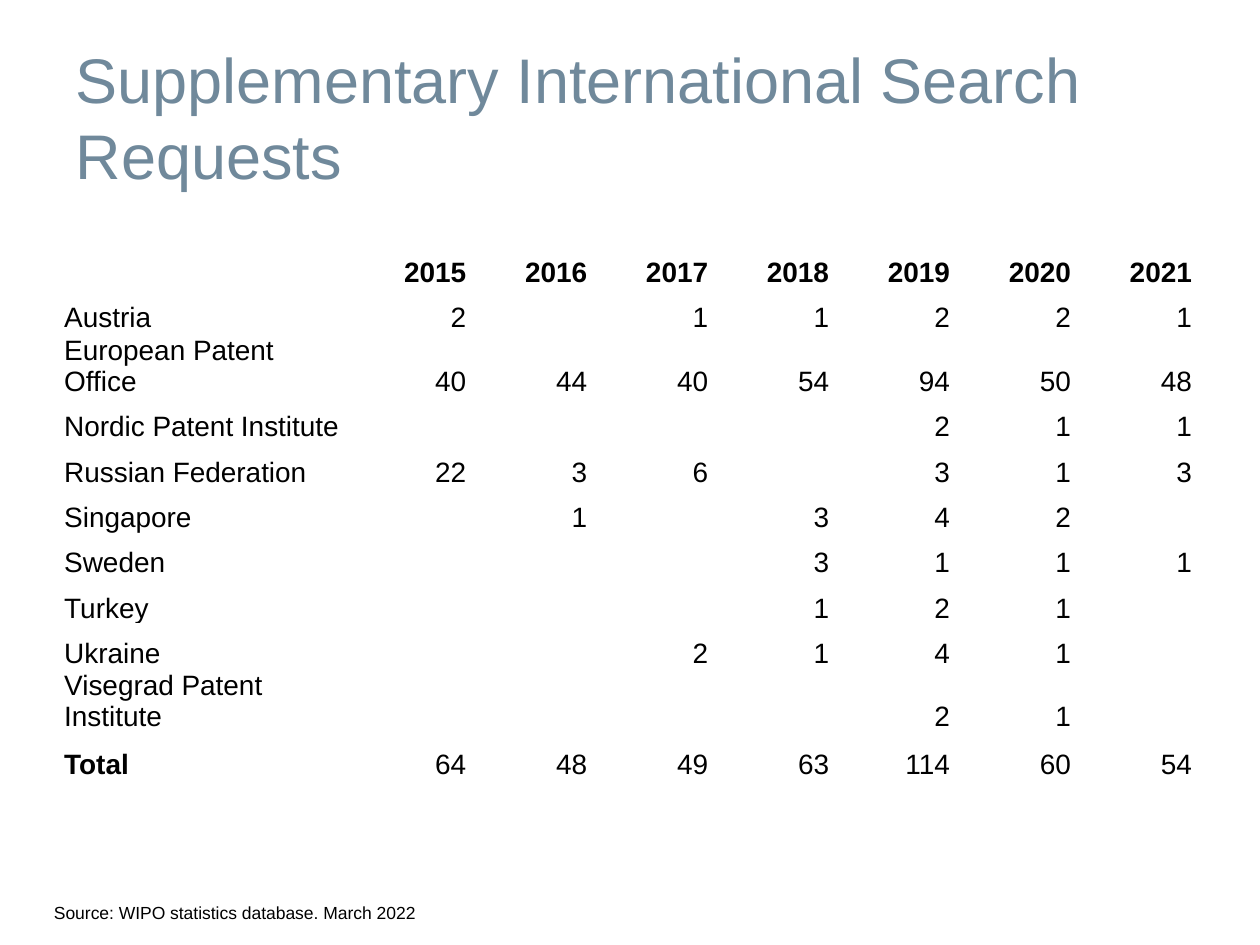
from lxml.etree import SubElement
from pptx import Presentation
from pptx.dml.color import RGBColor
from pptx.enum.text import MSO_ANCHOR, PP_ALIGN
from pptx.oxml.ns import qn
from pptx.util import Inches, Pt

COLORS = {"title": "70899B", "text": "000000"}
FONT = "Arial"
TITLE = "Supplementary International Search Requests"
SOURCE = "Source: WIPO statistics database. March 2022"
REQUESTS = [
    ("", 2015, 2016, 2017, 2018, 2019, 2020, 2021),
    ("Austria", 2, "", 1, 1, 2, 2, 1),
    ("European Patent Office", 40, 44, 40, 54, 94, 50, 48),
    ("Nordic Patent Institute", "", "", "", "", 2, 1, 1),
    ("Russian Federation", 22, 3, 6, "", 3, 1, 3),
    ("Singapore", "", 1, "", 3, 4, 2, ""),
    ("Sweden", "", "", "", 3, 1, 1, 1),
    ("Turkey", "", "", "", 1, 2, 1, ""),
    ("Ukraine", "", "", 2, 1, 4, 1, ""),
    ("Visegrad Patent Institute", "", "", "", "", 2, 1, ""),
    ("Total", 64, 48, 49, 63, 114, 60, 54),
]
LABEL_WIDTH, YEAR_WIDTH = 2.25, 0.96
HEADER_HEIGHT, ROW_HEIGHT, TOTAL_HEIGHT = 0.29, 0.36, 0.38


def write(frame, text, size, color="text", bold=False, align=PP_ALIGN.LEFT, anchor=MSO_ANCHOR.TOP):
    """Put one formatted paragraph into a text frame."""
    frame.word_wrap = True
    frame.vertical_anchor = anchor
    para = frame.paragraphs[0]
    para.alignment = align
    if not text:
        SubElement(para._p, qn("a:endParaRPr"), sz=str(size * 100))
        return
    span = para.add_run()
    span.text = text
    span.font.name = FONT
    span.font.size = Pt(size)
    span.font.bold = bold
    span.font.color.rgb = RGBColor.from_string(COLORS[color])


def add_requests_table(page):
    """Add the table of requests by authority and year."""
    years = len(REQUESTS[0]) - 1
    heights = [HEADER_HEIGHT, *[ROW_HEIGHT] * (len(REQUESTS) - 2), TOTAL_HEIGHT]
    table = page.shapes.add_table(
        len(REQUESTS), years + 1, Inches(0.5), Inches(2),
        Inches(LABEL_WIDTH + years * YEAR_WIDTH), Inches(sum(heights)),
    ).table
    table.first_row = table.horz_banding = False
    for column, width in zip(table.columns, [LABEL_WIDTH, *[YEAR_WIDTH] * years]):
        column.width = Inches(width)
    for row_index, (values, height) in enumerate(zip(REQUESTS, heights)):
        table.rows[row_index].height = Inches(height)
        for column_index, value in enumerate(values):
            cell = table.cell(row_index, column_index)
            cell.fill.background()
            cell.margin_left = cell.margin_right = cell.margin_top = Inches(0.01)
            cell.margin_bottom = 0
            cell.vertical_anchor = MSO_ANCHOR.BOTTOM
            write(
                cell.text_frame, str(value), 16,
                bold=row_index == 0 or value == "Total",
                align=PP_ALIGN.RIGHT if column_index else PP_ALIGN.LEFT,
                anchor=None,
            )
            cell.vertical_anchor = MSO_ANCHOR.BOTTOM


def main():
    """Build and save the slide."""
    deck = Presentation()
    deck.slide_width, deck.slide_height = Inches(10), Inches(7.5)
    page = deck.slides.add_slide(deck.slide_layouts[5])
    title = page.shapes.title
    title.left, title.top = Inches(0.5), Inches(0.3)
    title.width, title.height = Inches(9), Inches(1.25)
    write(title.text_frame, TITLE, 36, color="title", anchor=MSO_ANCHOR.MIDDLE)
    add_requests_table(page)
    box = page.shapes.add_textbox(Inches(0.33), Inches(7.11), Inches(5), Inches(0.27))
    write(box.text_frame, SOURCE, 10)
    deck.save("out.pptx")


if __name__ == "__main__":
    main()
